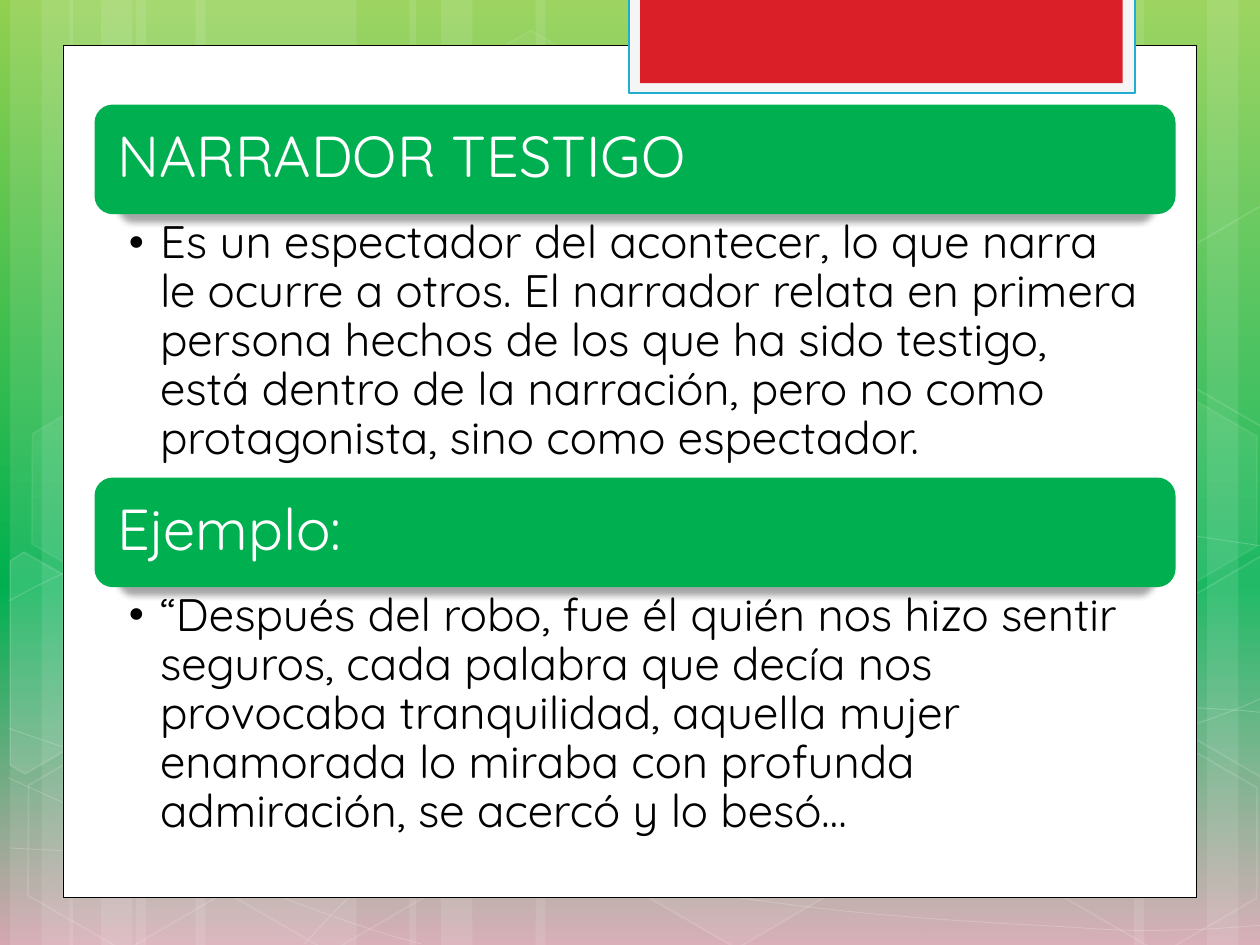
from dataclasses import dataclass
from math import cos, radians, sin
from typing import NamedTuple

from lxml.etree import SubElement
from pptx import Presentation
from pptx.dml.color import RGBColor as Rgb
from pptx.enum.shapes import MSO_SHAPE as Kind
from pptx.enum.text import MSO_ANCHOR as Anchor, PP_ALIGN as Align
from pptx.oxml.ns import qn
from pptx.util import Inches, Pt

WHITE, BLACK, GREEN = "FFFFFF", "000000", "00B050"
FONT = "Quicksand"
RECT = Kind.RECTANGLE
TURN = 30


class Box(NamedTuple):
    left: float
    top: float
    width: float
    height: float


@dataclass
class Look:
    fill: str | None = None
    clear: int = 100
    line: str | None = None
    weight: float = 1
    faint: int = 100


@dataclass
class Part:
    title: str
    body: str
    top: float


STRIPS = [(1.08, 1.75), (0.08, 0.5), (0.33, 0.83), (1.55, 1.75), (0.55, 0.5), (0.8, 0.83),
          (7.33, 1.75), (9.58, 0.5), (9, 0.83), (4.25, 3.08), (3.25, 0.5), (3.5, 0.83)]

CURVES = [
    [(0.07, 6.73), (0.61, 6.76), (1.15, 6.79), (1.9, 6.78), (2.65, 6.77), (3.58, 6.75), (4.58, 6.65),
     (5.58, 6.55), (7, 6.36), (7.92, 6.17), (8.83, 5.98), (9.77, 5.68), (10.07, 5.51)],
    [(0.07, 4.77), (0.36, 4.61), (0.65, 4.46), (1.21, 4.31), (1.78, 4.16), (2.59, 3.94), (3.47, 3.87),
     (4.36, 3.8), (5.44, 3.79), (6.54, 3.87), (7.64, 3.95), (9.47, 4.26), (10.07, 4.34)],
    [(0.06, 6.17), (1.27, 6.72), (2.47, 7.27), (3.34, 7.49)],
    [(0.07, 5.78), (0.38, 5.89), (0.7, 6), (1.28, 6.16), (1.86, 6.31), (2.73, 6.56), (3.57, 6.73),
     (4.4, 6.9), (5.45, 7.08), (6.28, 7.18), (7.11, 7.29), (8, 7.33), (8.53, 7.36),
     (9.05, 7.4), (9.19, 7.38), (9.45, 7.38), (9.71, 7.37), (9.89, 7.35), (10.07, 7.34)],
    [(2.42, 7.49), (2.6, 7.29), (2.78, 7.09), (3.02, 6.91), (3.26, 6.73), (3.6, 6.53), (3.88, 6.39),
     (4.16, 6.25), (4.33, 6.19), (4.7, 6.09), (5.06, 5.99), (5.73, 5.85), (6.08, 5.78),
     (6.44, 5.71), (6.49, 5.71), (6.8, 5.69), (7.11, 5.66), (7.6, 5.63), (7.94, 5.62),
     (8.29, 5.61), (8.86, 5.62), (8.86, 5.62), (9.08, 5.62), (9.31, 5.62), (9.53, 5.62),
     (9.71, 5.63), (9.88, 5.64), (9.97, 5.65), (10.06, 5.66), (10.03, 5.65), (10.06, 5.66)],
]

HEXES = [(3.34, 0.36, 4, 8), (4.97, 5.89, 6, 12), (0.11, 5.91, 0, 12), (0.14, 3.12, 7, 8),
         (1.74, 5.92, 0, 12), (7.53, 4.53, 10, 12), (8.34, 5.93, 0, 12), (8.34, 3.14, 7, 8)]

CUTS = [
    ((0.36, 5.35), 10, [(0.08, 4.45), (0.19, 4.38), (0.96, 4.82), (0.95, 5.7), (0.2, 6.14), (0.08, 6.07)]),
    ((9.85, 5.2), 4, [(9.26, 4.85), (10.01, 4.41), (10.09, 4.46), (10.09, 6.13), (10.02, 6.17), (9.26, 5.73)]),
    ((9.85, 2.41), 0, [(9.26, 2.07), (10.01, 1.63), (10.1, 1.68), (10.09, 3.35), (10.02, 3.39), (9.26, 2.95)]),
]

PANELS = [
    (Box(0.5, 0.36, 9, 6.76), Look(WHITE, line=BLACK, weight=0.5)),
    (Box(4.99, -0.02, 4.02, 0.76), Look("F5F5F5", line="1FAECD", weight=1.25)),
    (Box(5.08, -0.02, 3.83, 0.68), Look("DA1F28")),
]

PARTS = [
    Part("NARRADOR TESTIGO",
         "Es un espectador del acontecer, lo que narra le ocurre a otros. El narrador relata en "
         "primera persona hechos de los que ha sido testigo, está dentro de la narración, pero no "
         "como protagonista, sino como espectador.", 0.83),
    Part("Ejemplo:",
         "“Después del robo, fue él quién nos hizo sentir seguros, cada palabra que decía nos "
         "provocaba tranquilidad, aquella mujer enamorada lo miraba con profunda admiración, se "
         "acercó y lo besó…", 3.79),
]


def add(root, tag: str, **attrs):
    return SubElement(root, qn(tag), {key: str(val) for key, val in attrs.items()})


def tint(fill, color: str | None, alpha: int = 100) -> None:
    if not color or not alpha:
        fill.background()
        return
    fill.solid()
    fill.fore_color.rgb = Rgb.from_string(color)
    if alpha < 100:
        add(fill._xPr.find(qn("a:solidFill"))[0], "a:alpha", val=alpha * 1000)


def paint(shape, look: Look):
    shape.shadow.inherit = False
    tint(shape.fill, look.fill, look.clear)
    tint(shape.line.fill, look.line, look.faint)
    if look.line:
        shape.line.width = Pt(look.weight)
    return shape


def block(slide, kind, box: Box, look: Look):
    return paint(slide.shapes.add_shape(kind, *map(Inches, box)), look)


def trace(slide, dots: list, look: Look, close: bool):
    spots = [(Inches(x), Inches(y)) for x, y in dots]
    pen = slide.shapes.build_freeform(*spots[0])
    pen.add_line_segments(spots[1:], close=close)
    return paint(pen.convert_to_shape(), look)


def bend(shape) -> None:
    track = shape._element.find(".//" + qn("a:path"))
    legs = track.findall(qn("a:lnTo"))
    for at in range(0, len(legs), 3):
        arc = add(track, "a:cubicBezTo")
        for leg in legs[at:at + 3]:
            arc.append(leg[0])
            track.remove(leg)


def spin(dot: tuple, mid: tuple) -> tuple:
    x, y = dot[0] - mid[0], dot[1] - mid[1]
    c, s = cos(radians(TURN)), sin(radians(TURN))
    return mid[0] + x * c + y * s, mid[1] - x * s + y * c


def write(slide, box: Box, text: str, size: int, color: str, after: int, pads: tuple, anchor):
    frame = slide.shapes.add_textbox(*map(Inches, box)).text_frame
    sides = ("margin_left", "margin_top", "margin_right", "margin_bottom")
    form = dict(zip(sides, map(Inches, pads))) | {"word_wrap": True, "vertical_anchor": anchor}
    for name, val in form.items():
        setattr(frame, name, val)
    para = frame.paragraphs[0]
    para.alignment, para.line_spacing = Align.LEFT, 0.9
    props = para._p.get_or_add_pPr()
    add(add(props, "a:spcAft"), "a:spcPct", val=after * 1000)
    run = para.add_run()
    run.text = text
    for name, val in {"size": Pt(size), "name": FONT}.items():
        setattr(run.font, name, val)
    tint(run.font.fill, color)
    return props


def shade(shape) -> None:
    glow = add(shape._element.spPr.find(qn("a:effectLst")), "a:outerShdw", blurRad=Pt(3.5),
               dist=Pt(4), dir=5400000, sx=96000, algn="ctr", rotWithShape=0)
    add(add(glow, "a:srgbClr", val=BLACK), "a:alpha", val=34000)


def draw_part(slide, part: Part) -> None:
    shade(block(slide, Kind.ROUNDED_RECTANGLE, Box(0.75, part.top, 8.58, 0.87), Look(GREEN)))
    head = Box(0.79, part.top + 0.04, 8.5, 0.78)
    write(slide, head, part.title, 33, WHITE, 35, (0.14,) * 4, Anchor.MIDDLE)
    area = Box(0.75, part.top + 0.86, 8.58, 2.09)
    props = write(slide, area, part.body, 26, BLACK, 20, (0.27, 0.05, 0.26, 0.05), Anchor.TOP)
    for name, val in {"marL": Inches(0.25), "indent": Inches(-0.25), "lvl": 1}.items():
        props.set(name, str(val))
    add(props, "a:buFont", typeface=FONT)
    add(props, "a:buChar", char="•")


def draw_back(slide) -> None:
    fill = slide.background.fill
    fill.gradient()
    fill.gradient_angle = 270
    stops = slide._element.find(".//" + qn("a:gsLst"))
    for stop in list(stops):
        stops.remove(stop)
    for pos, color in ((0, "92D050"), (62, GREEN), (100, "D5A7B1")):
        add(add(stops, "a:gs", pos=pos * 1000), "a:srgbClr", val=color)
    for left, width in STRIPS:
        block(slide, RECT, Box(left, 0, width, 7.5), Look(WHITE, 10))
    for knots in CURVES:
        bend(trace(slide, knots, Look(line=WHITE, weight=0.5, faint=20), False))
    for left, top, clear, faint in HEXES:
        look = Look(WHITE, clear, WHITE, 1, faint)
        cell = block(slide, Kind.HEXAGON, Box(left, top, 1.75, 1.52), look)
        cell.adjustments[0], cell.rotation = 0.285, TURN
    for mid, clear, dots in CUTS:
        flat = [spin(dot, mid) for dot in dots]
        trace(slide, flat, Look(WHITE, clear, WHITE, 1, 12), True).rotation = TURN


def main() -> None:
    """Build the slide on the witness narrator and save it."""
    deck = Presentation()
    deck.slide_width, deck.slide_height = Inches(10), Inches(7.5)
    slide = deck.slides.add_slide(deck.slide_layouts[6])
    draw_back(slide)
    for box, look in PANELS:
        block(slide, RECT, box, look)
    for part in PARTS:
        draw_part(slide, part)
    deck.save("out.pptx")


if __name__ == "__main__":
    main()
